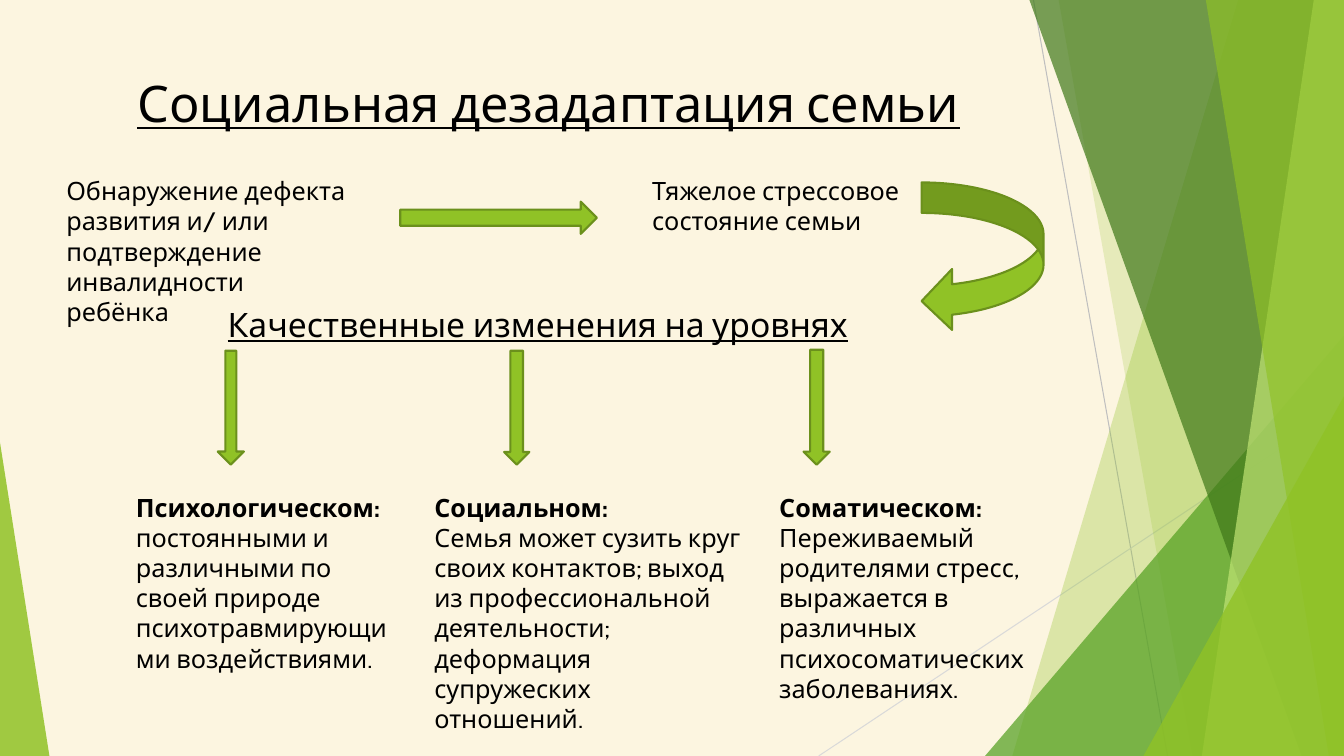
"""Builds the slide on social maladjustment of the family."""
from dataclasses import dataclass

from lxml.etree import SubElement
from pptx import Presentation
from pptx.dml.color import RGBColor
from pptx.enum.shapes import MSO_CONNECTOR, MSO_SHAPE
from pptx.enum.text import MSO_ANCHOR, MSO_AUTO_SIZE, PP_ALIGN
from pptx.oxml.ns import qn
from pptx.util import Pt

PX = 9144
WIDTH, HEIGHT = 1333, 750
FONT = "Cabin"
BLACK, LIME, OLIVE = "000000", "90C226", "6B901C"


@dataclass(frozen=True)
class Ray:
    """A thin decorative line."""
    start: tuple[int, int]
    end: tuple[int, int]
    color: str


@dataclass(frozen=True)
class Facet:
    """A translucent panel between a slanted edge and the right slide edge."""
    top_x: int
    bottom_x: int
    color: str
    opacity: int


@dataclass(frozen=True)
class Corner:
    """A translucent triangle standing on the bottom edge."""
    left: int
    top: int
    width: int
    apex: int
    color: str
    opacity: int


@dataclass(frozen=True)
class Arrow:
    """A block arrow."""
    kind: MSO_SHAPE
    box: tuple[int, int, int, int]
    shaft: float | None = None


@dataclass(frozen=True)
class Caption:
    """A text box; each paragraph is a list of (text, bold) pieces."""
    box: tuple[int, int, int, int]
    paragraphs: list[list[tuple[str, bool]]]
    size: int = 18
    underline: bool = False


DECOR = [
    Ray((1025, 0), (1158, 750), "BFBFBF"),
    Ray((1333, 403), (812, 750), "D9D9D9"),
    Facet(1228, 1004, LIME, 30),
    Facet(1050, 1183, LIME, 20),
    Corner(977, 333, 356, 1, "54A021", 72),
    Facet(1021, 1291, "3F7819", 70),
    Facet(1303, 1192, "C0E474", 70),
    Facet(1196, 1318, LIME, 65),
    Corner(1134, 393, 199, 1, LIME, 80),
    Corner(0, 439, 49, 0, LIME, 85),
]

ARROWS = [
    Arrow(MSO_SHAPE.RIGHT_ARROW, (397, 200, 195, 32)),
    Arrow(MSO_SHAPE.CURVED_LEFT_ARROW, (914, 181, 121, 148)),
    Arrow(MSO_SHAPE.DOWN_ARROW, (216, 348, 26, 113), 0.42),
    Arrow(MSO_SHAPE.DOWN_ARROW, (500, 348, 25, 113)),
    Arrow(MSO_SHAPE.DOWN_ARROW, (797, 347, 26, 114)),
]

CAPTIONS = [
    Caption((56, 169, 300, 131), [[(
        "Обнаружение дефекта развития и/ или подтверждение инвалидности ребёнка", False)]]),
    Caption((637, 169, 344, 71), [[("Тяжелое стрессовое состояние семьи", False)]]),
    Caption((216, 297, 661, 50), [[("Качественные изменения на уровнях", False)]], 24, True),
    Caption((125, 483, 280, 192), [[
        ("Психологическом: ", True),
        ("постоянными и различными по своей природе психотравмирующими воздействиями.", False)]]),
    Caption((421, 483, 326, 222), [
        [("Социальном:", True)],
        [("Семья может сузить круг своих контактов; выход из профессиональной "
          "деятельности; деформация супружеских отношений.", False)]]),
    Caption((763, 483, 296, 222), [
        [("Соматическом:", True)],
        [("Переживаемый родителями стресс, выражается в различных "
          "психосоматических заболеваниях.", False)]]),
]


def rgb(color: str) -> RGBColor:
    """Turn a hex string into a colour."""
    return RGBColor.from_string(color)


def emu(*lengths: int) -> list[int]:
    """Turn px lengths into EMU."""
    return [length * PX for length in lengths]


def paint(shape, color: str, opacity: int = 100, outline: str | None = None) -> None:
    """Fill a shape and set its outline."""
    shape.shadow.inherit = False
    shape.fill.solid()
    shape.fill.fore_color.rgb = rgb(color)
    if opacity < 100:
        tint = shape.fill._xPr.find(qn("a:solidFill"))[0]
        SubElement(tint, qn("a:alpha")).set("val", str(opacity * 1000))
    if outline:
        shape.line.color.rgb = rgb(outline)
        shape.line.width = Pt(1.5)
    else:
        shape.line.fill.background()


def write(paragraph, text: str, *, size: int, bold: bool = False,
          underline: bool = False) -> None:
    """Add a formatted run to a paragraph."""
    run = paragraph.add_run()
    run.text = text
    font = run.font
    font.name, font.size, font.bold, font.underline = FONT, Pt(size), bold, underline
    font.color.rgb = rgb(BLACK)


def draw_decor(shapes, part: Ray | Facet | Corner) -> None:
    """Draw one part of the faceted backdrop."""
    match part:
        case Ray():
            ray = shapes.add_connector(MSO_CONNECTOR.STRAIGHT, *emu(*part.start, *part.end))
            ray.line.color.rgb = rgb(part.color)
            ray.line.width = Pt(0.75)
            SubElement(ray._element.spPr, qn("a:effectLst"))
        case Facet():
            outline = shapes.build_freeform(part.top_x, 0, scale=PX)
            outline.add_line_segments([(WIDTH, 0), (WIDTH, HEIGHT), (part.bottom_x, HEIGHT)])
            paint(outline.convert_to_shape(), part.color, part.opacity)
        case Corner():
            box = emu(part.left, part.top, part.width, HEIGHT - part.top)
            corner = shapes.add_shape(MSO_SHAPE.ISOSCELES_TRIANGLE, *box)
            corner.adjustments[0] = part.apex
            paint(corner, part.color, part.opacity)


def draw_arrow(shapes, arrow: Arrow) -> None:
    """Draw a block arrow."""
    block = shapes.add_shape(arrow.kind, *emu(*arrow.box))
    if arrow.shaft is not None:
        block.adjustments[0] = arrow.shaft
    paint(block, LIME, outline=OLIVE)


def draw_caption(shapes, caption: Caption) -> None:
    """Draw a wrapped text box."""
    frame = shapes.add_textbox(*emu(*caption.box)).text_frame
    frame.word_wrap = True
    for index, pieces in enumerate(caption.paragraphs):
        paragraph = frame.add_paragraph() if index else frame.paragraphs[0]
        for text, bold in pieces:
            write(paragraph, text, size=caption.size, bold=bold, underline=caption.underline)


def place_title(shapes, text: str) -> None:
    """Move the title placeholder above the backdrop and fill it."""
    title = shapes.title
    shapes._spTree.append(title._element)
    title.left, title.top, title.width, title.height = emu(74, 67, 940, 144)
    frame = title.text_frame
    frame.word_wrap = True
    frame.auto_size = MSO_AUTO_SIZE.NONE
    frame.vertical_anchor = MSO_ANCHOR.TOP
    frame.paragraphs[0].alignment = PP_ALIGN.CENTER
    write(frame.paragraphs[0], text, size=36, underline=True)


def main() -> None:
    """Build and save the slide."""
    deck = Presentation()
    deck.slide_width, deck.slide_height = emu(WIDTH, HEIGHT)
    slide = deck.slides.add_slide(deck.slide_layouts[5])
    slide.background.fill.solid()
    slide.background.fill.fore_color.rgb = rgb("FCF5E0")
    for part in DECOR:
        draw_decor(slide.shapes, part)
    place_title(slide.shapes, "Социальная дезадаптация семьи")
    for arrow in ARROWS:
        draw_arrow(slide.shapes, arrow)
    for caption in CAPTIONS:
        draw_caption(slide.shapes, caption)
    deck.save("out.pptx")


if __name__ == "__main__":
    main()
